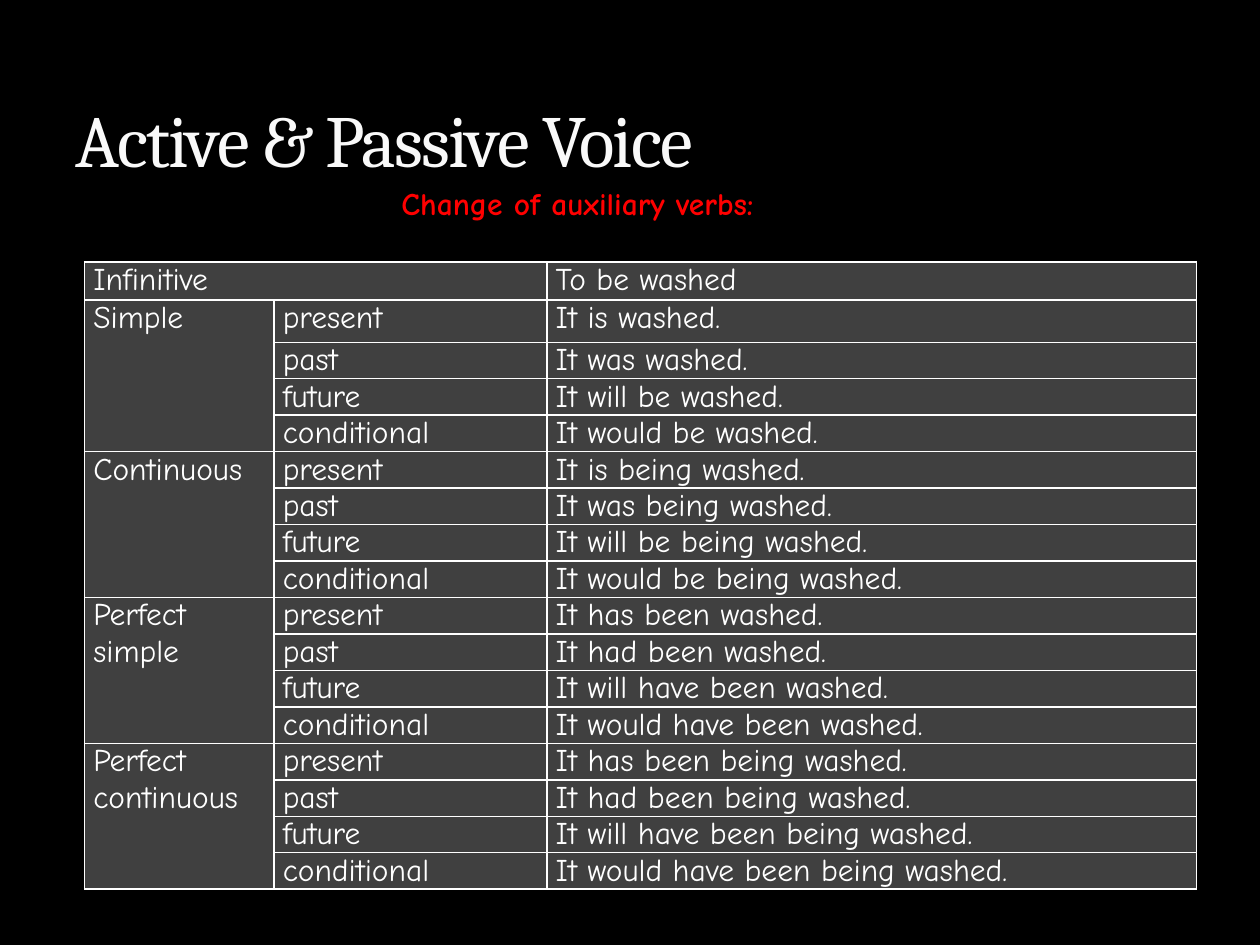
from pptx import Presentation
from pptx.dml import color
from pptx.enum import text
from pptx.oxml import parse_xml
from pptx.oxml import ns
from pptx.util import Pt


def paint(code):
    return color.RGBColor.from_string(code)


def line(tag, width, code, alpha=100):
    return parse_xml(
        f'<a:{tag} {ns.nsdecls("a")} w="{Pt(width)}"><a:solidFill>'
        f'<a:srgbClr val="{code}"><a:alpha val="{alpha * 1000}"/></a:srgbClr>'
        f'</a:solidFill><a:prstDash val="solid"/></a:{tag}>')


def write(frame, words, size=18, face="Comic Neue", ink="FFFFFF",
          bold=False, align=text.PP_ALIGN.LEFT):
    para = frame.paragraphs[0]
    para.alignment = align
    run = para.add_run()
    run.text = words
    font = run.font
    font.size, font.name, font.bold = Pt(size), face, bold
    font.color.rgb = paint(ink)
    return run


class Page:
    back, panel, rule = "000000", "404040", "FFFFFF"

    def __init__(self, deck):
        self.slide = deck.slides.add_slide(deck.slide_layouts[5])
        fill = self.slide.background.fill
        fill.solid()
        fill.fore_color.rgb = paint(self.back)

    def place(self, shape, left, top, width, height):
        shape.left, shape.top = Pt(left), Pt(top)
        shape.width, shape.height = Pt(width), Pt(height)

    def title(self, words, *box):
        shape = self.slide.shapes.title
        self.place(shape, *box)
        frame = shape.text_frame
        frame.vertical_anchor = text.MSO_ANCHOR.BOTTOM
        run = write(frame, words, size=42, face="Cambria", ink="F9F9F9")
        props = run.font._element
        props.set("spc", "-100")
        props.insert(0, line("ln", 0.25, "3C4422", 25))

    def label(self, words, *box, **style):
        shape = self.slide.shapes.add_textbox(*map(Pt, box))
        frame = shape.text_frame
        frame.word_wrap = True
        frame.auto_size = text.MSO_AUTO_SIZE.SHAPE_TO_FIT_TEXT
        write(frame, words, **style)

    def cell(self, cell):
        props = cell._tc.get_or_add_tcPr()
        for side in "LRTB":
            props.append(line("ln" + side, 1, self.rule))
        cell.fill.solid()
        cell.fill.fore_color.rgb = paint(self.panel)
        cell.margin_left = cell.margin_right = Pt(5)
        cell.margin_top = cell.margin_bottom = 0

    def table(self, left, top, cols, rows):
        shape = self.slide.shapes.add_table(
            len(rows), len(cols), Pt(left), Pt(top), Pt(sum(cols)), Pt(sum(rows)))
        grid = shape.table
        for col, width in zip(grid.columns, cols):
            col.width = Pt(width)
        for row, height in zip(grid.rows, rows):
            row.height = Pt(height)
        for cell in grid.iter_cells():
            self.cell(cell)
        return grid


def main():
    deck = Presentation()
    deck.slide_width, deck.slide_height = Pt(720), Pt(540)
    page = Page(deck)
    page.title("Active & Passive Voice", 36, 12, 648, 96)

    tenses = ["present", "past", "future", "conditional"]
    groups = {
        "Simple": ["is", "was", "will be", "would be"],
        "Continuous": ["is being", "was being", "will be being",
                       "would be being"],
        "Perfect simple": ["has been", "had been", "will have been",
                           "would have been"],
        "Perfect continuous": ["has been being", "had been being",
                               "will have been being",
                               "would have been being"],
    }
    grid = page.table(48.3, 149.8, [108.3, 156, 371.2],
                      [21.7, 24.1] + [20.85] * 15)
    grid.cell(0, 0).merge(grid.cell(0, 1))
    write(grid.cell(0, 0).text_frame, "Infinitive")
    write(grid.cell(0, 2).text_frame, "To be washed")
    for part, (name, verbs) in enumerate(groups.items()):
        first = 1 + part * len(tenses)
        grid.cell(first, 0).merge(grid.cell(first + len(tenses) - 1, 0))
        write(grid.cell(first, 0).text_frame, name)
        for row, (tense, verb) in enumerate(zip(tenses, verbs), first):
            write(grid.cell(row, 1).text_frame, tense)
            write(grid.cell(row, 2).text_frame, f"It {verb} washed.")

    page.label("Change of auxiliary verbs:", 83.5, 101.5, 493, 29,
               ink="FF0000", bold=True, align=text.PP_ALIGN.CENTER)
    deck.save("out.pptx")


if __name__ == "__main__":
    main()
